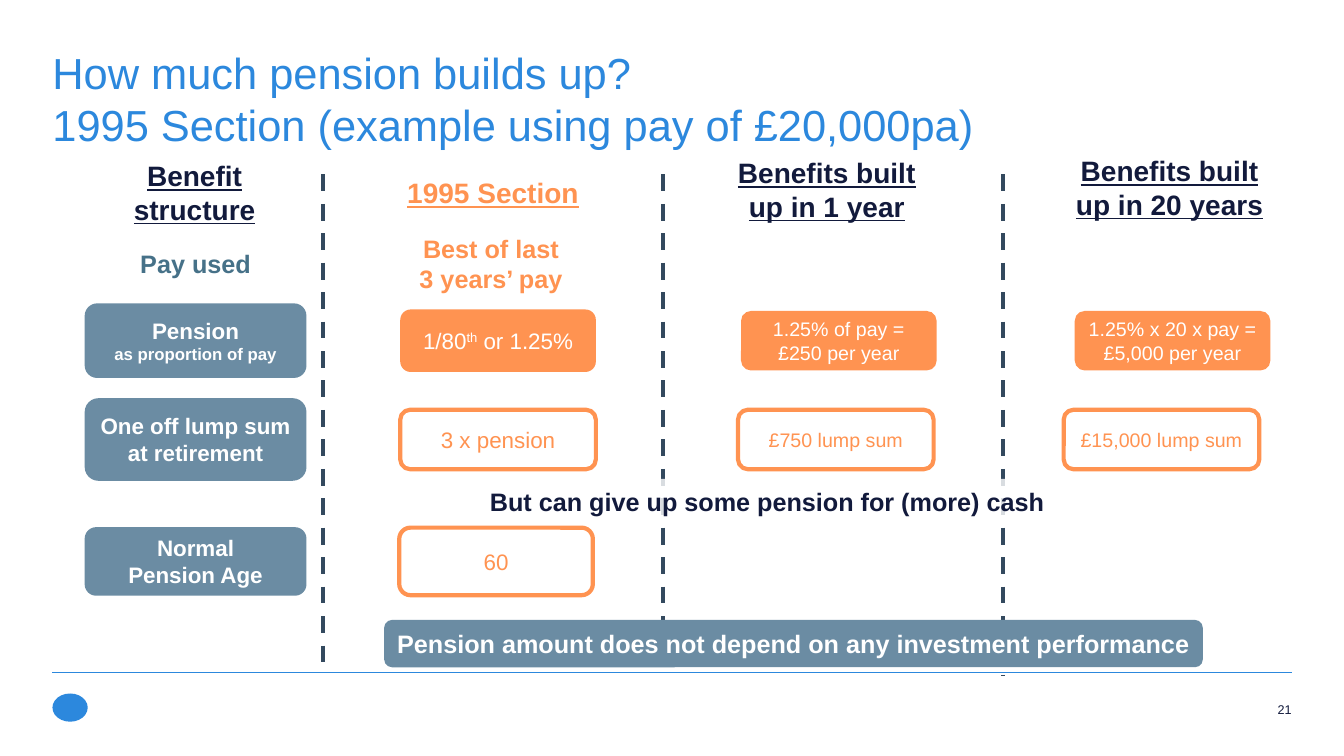
from dataclasses import dataclass

from lxml import etree
from pptx import Presentation
from pptx.dml.color import RGBColor
from pptx.enum.dml import MSO_LINE
from pptx.enum.shapes import MSO_CONNECTOR, MSO_SHAPE
from pptx.enum.text import MSO_ANCHOR, MSO_AUTO_SIZE, PP_ALIGN
from pptx.oxml.ns import qn
from pptx.util import Inches, Pt

DASH = MSO_LINE.DASH
STRAIGHT = MSO_CONNECTOR.STRAIGHT
ROUNDED, OVAL = MSO_SHAPE.ROUNDED_RECTANGLE, MSO_SHAPE.OVAL
MIDDLE, TOP = MSO_ANCHOR.MIDDLE, MSO_ANCHOR.TOP
LEFT, CENTER, RIGHT = PP_ALIGN.LEFT, PP_ALIGN.CENTER, PP_ALIGN.RIGHT

BLUE = RGBColor(0x2C, 0x88, 0xDD)
NAVY = RGBColor(0x12, 0x1A, 0x3C)
ORANGE = RGBColor(0xFF, 0x93, 0x51)
SLATE = RGBColor(0x6B, 0x8C, 0xA3)
TEAL = RGBColor(0x46, 0x71, 0x88)
DASH_GREY = RGBColor(0x33, 0x49, 0x5E)
WHITE = RGBColor(0xFF, 0xFF, 0xFF)

FONT = "Arial"
MARGIN_LEFT, MARGIN_RIGHT = 0.52, 12.81
FOOTER_Y = 6.67

# Centres, in inches, of the grid's columns and rows
COLUMNS = (1.94, 4.94, 8.3, 11.6)
HEADING, PAY, PENSION, LUMP_SUM, AGE = 1.91, 2.61, 3.38, 4.36, 5.57
DIVIDER_X, DIVIDER_GAP, DIVIDER_TOP = 3.2, 3.375, 1.73
DIVIDER_BOTTOMS = (6.66, 6.66, 6.7)


@dataclass(frozen=True)
class Style:
    size: float
    color: RGBColor
    fill: RGBColor | None = None
    border: RGBColor | None = None
    bold: bool = False
    underline: bool = False


@dataclass(frozen=True)
class Card:
    """A rounded box centred on a grid cell, nudged by dx and dy."""
    text: str
    col: int
    row: float
    width: float
    height: float
    style: Style
    dx: float = 0
    dy: float = 0
    later_size: float | None = None


HEAD = Style(20, NAVY, bold=True, underline=True)
HEAD_1995 = Style(20, ORANGE, bold=True, underline=True)
PAY_LABEL = Style(18, TEAL, bold=True)
PAY_1995 = Style(18, ORANGE, bold=True)
LABEL = Style(16, WHITE, fill=SLATE, bold=True)
SOLID = Style(16, WHITE, fill=ORANGE)
SOLID_SMALL = Style(14, WHITE, fill=ORANGE)
OUTLINE = Style(16, ORANGE, border=ORANGE)
OUTLINE_SMALL = Style(14, ORANGE, border=ORANGE)
NOTE = Style(18, NAVY, fill=WHITE, bold=True)
BANNER = Style(18, WHITE, fill=SLATE, bold=True)

CARDS = (
    Card("1/80^th^ or 1.25%", 1, PENSION, 1.94, 0.62, SOLID),
    Card("Pension\nas proportion of pay", 0, PENSION, 2.2, 0.74, LABEL, later_size=12),
    Card("Best of last\n3 years’ pay", 1, PAY, 1.77, 0.74, PAY_1995, dx=-0.07),
    Card("Pay used", 0, PAY, 1.77, 0.74, PAY_LABEL),
    Card("One off lump sum at retirement", 0, LUMP_SUM, 2.2, 0.82, LABEL),
    Card("3 x pension", 1, LUMP_SUM, 1.94, 0.59, OUTLINE),
    Card("Benefit structure", 0, HEADING, 2.05, 0.74, HEAD, dx=-0.01),
    Card("Normal\nPension Age", 0, AGE, 2.2, 0.68, LABEL),
    Card("60", 1, AGE, 1.92, 0.67, OUTLINE, dx=-0.02),
    Card("Benefits built up in 20 years", 3, HEADING, 2.21, 0.74, HEAD, dy=-0.05),
    Card("1.25% of pay = £250 per year", 2, PENSION, 1.94, 0.59, SOLID_SMALL, dx=0.02),
    Card("£750 lump sum", 2, LUMP_SUM, 1.94, 0.59, OUTLINE_SMALL, dx=-0.01),
    Card("1.25% x 20 x pay = £5,000 per year", 3, PENSION, 1.94, 0.59, SOLID_SMALL, dx=0.03),
    Card("£15,000 lump sum", 3, LUMP_SUM, 1.94, 0.59, OUTLINE_SMALL, dx=-0.08),
    Card("Benefits built up in 1 year", 2, HEADING, 2.05, 0.74, HEAD, dx=-0.1, dy=-0.03),
    Card("1995 Section", 1, HEADING, 2.05, 0.74, HEAD_1995, dx=-0.05),
)


def put_text(tf, text: str, *, size: float, color: RGBColor, bold: bool = False,
             underline: bool = False, align=CENTER, anchor=MIDDLE,
             inset: float | None = None, later_size: float | None = None) -> None:
    """Write text: \\n starts a paragraph, \\v breaks a line, ^ encloses a superscript."""
    tf.word_wrap = True
    tf.auto_size = MSO_AUTO_SIZE.NONE
    tf.vertical_anchor = anchor
    if inset is not None:
        tf.margin_left = tf.margin_right = tf.margin_top = tf.margin_bottom = Inches(inset)
    for i, paragraph in enumerate(text.split("\n")):
        p = tf.add_paragraph() if i else tf.paragraphs[0]
        p.alignment = align
        for j, line in enumerate(paragraph.split("\v")):
            if j:
                p.add_line_break()
            for k, part in enumerate(line.split("^")):
                r = p.add_run()
                r.text = part
                r.font.name, r.font.bold, r.font.underline = FONT, bold, underline
                r.font.size = Pt(later_size if i and later_size else size)
                r.font.color.rgb = color
                if k % 2:
                    r.font._element.set("baseline", "30000")


def add_box(s, kind, x: float, y: float, w: float, h: float,
            fill: RGBColor | None = None, border: RGBColor | None = None):
    sp = s.shapes.add_shape(kind, Inches(x), Inches(y), Inches(w), Inches(h))
    sp.shadow.inherit = False
    if fill is None:
        sp.fill.background()
    else:
        sp.fill.solid()
        sp.fill.fore_color.rgb = fill
    if border is None:
        sp.line.fill.background()
    else:
        sp.line.color.rgb = border
        sp.line.width = Pt(3)
    return sp


def add_text_box(s, text: str, x: float, y: float, w: float, h: float, style: Style,
                 later_size: float | None = None):
    sp = add_box(s, ROUNDED, x, y, w, h, style.fill, style.border)
    put_text(sp.text_frame, text, size=style.size, color=style.color, bold=style.bold,
             underline=style.underline, later_size=later_size)
    return sp


def add_card(s, card: Card) -> None:
    x = COLUMNS[card.col] + card.dx - card.width / 2
    y = card.row + card.dy - card.height / 2
    add_text_box(s, card.text, x, y, card.width, card.height, card.style, card.later_size)


def add_line(s, x1: float, y1: float, x2: float, y2: float, color: RGBColor,
             width: float, dash=None) -> None:
    line = s.shapes.add_connector(STRAIGHT, Inches(x1), Inches(y1), Inches(x2), Inches(y2))
    line.line.color.rgb = color
    line.line.width = Pt(width)
    if dash is not None:
        line.line.dash_style = dash
    etree.SubElement(line._element.spPr, qn("a:effectLst"))


def set_opacity(sp, percent: int) -> None:
    color = sp._element.spPr.find(qn("a:solidFill"))[0]
    etree.SubElement(color, qn("a:alpha")).set("val", str(percent * 1000))


def main() -> None:
    prs = Presentation()
    prs.slide_width, prs.slide_height = Inches(13.33), Inches(7.5)
    s = prs.slides.add_slide(prs.slide_layouts[5])

    title = s.shapes.title
    title.left, title.top = Inches(MARGIN_LEFT), Inches(0.41)
    title.width, title.height = Inches(12.28), Inches(1.13)
    put_text(title.text_frame,
             "How much pension builds up?\v1995 Section (example using pay of £20,000pa)",
             size=31, color=BLUE, align=LEFT, inset=0)

    add_line(s, MARGIN_LEFT, FOOTER_Y, MARGIN_RIGHT, FOOTER_Y, BLUE, 0.75)
    add_box(s, OVAL, MARGIN_LEFT, 6.88, 0.35, 0.28, BLUE)
    number = s.shapes.add_textbox(Inches(MARGIN_RIGHT - 0.88), Inches(6.96),
                                  Inches(0.88), Inches(0.24))
    put_text(number.text_frame, "21", size=9, color=NAVY, align=RIGHT, anchor=TOP, inset=0)

    for i, bottom in enumerate(DIVIDER_BOTTOMS):
        x = DIVIDER_X + i * DIVIDER_GAP
        add_line(s, x, DIVIDER_TOP, x, bottom, DASH_GREY, 3, DASH)
    for card in CARDS:
        add_card(s, card)

    note = add_text_box(s, "But can give up some pension for (more) cash",
                        4.48, 4.75, 6.26, 0.45, NOTE)
    set_opacity(note, 81)
    add_text_box(s, "Pension amount does not depend on any investment performance",
                 3.81, 6.15, 8.12, 0.47, BANNER)
    prs.save("out.pptx")


if __name__ == "__main__":
    main()
